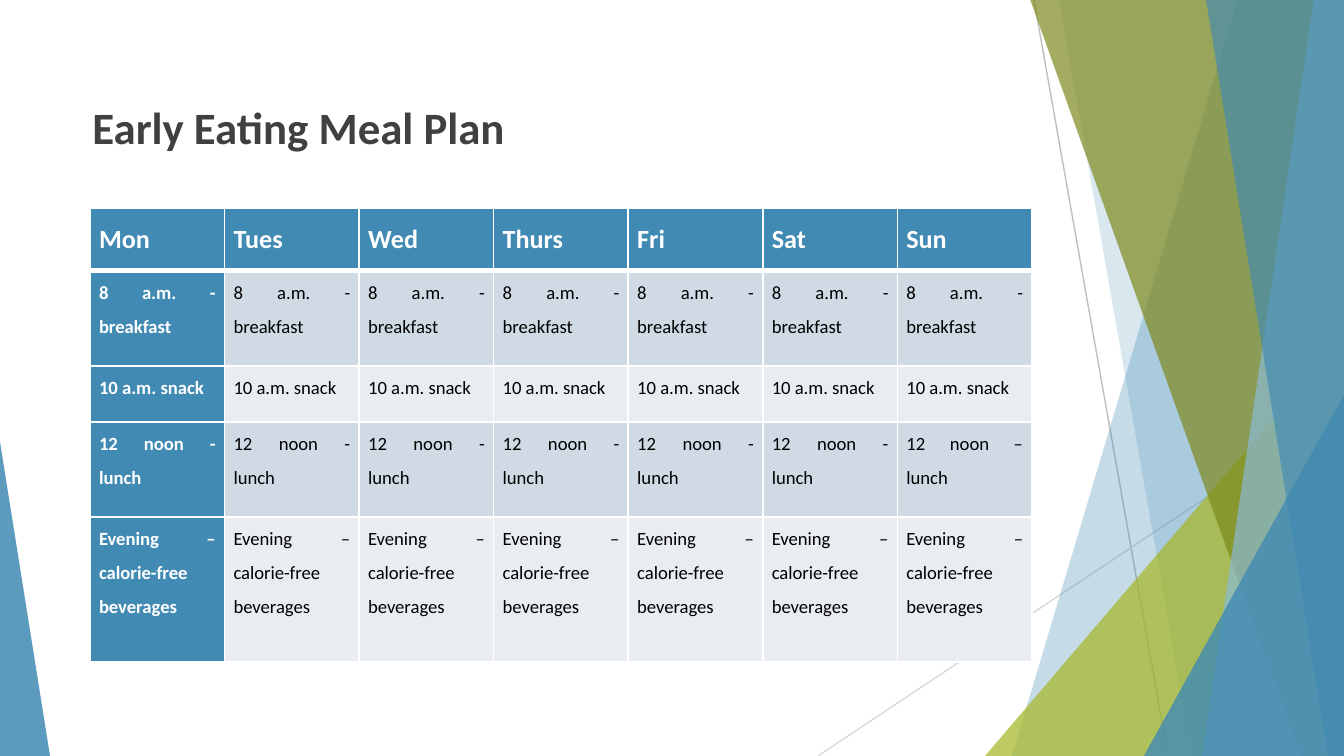
from lxml.etree import SubElement
from pptx import Presentation
from pptx.dml.color import RGBColor
from pptx.enum.shapes import MSO_CONNECTOR, MSO_SHAPE
from pptx.enum.text import MSO_ANCHOR, MSO_AUTO_SIZE, PP_ALIGN
from pptx.oxml.ns import qn
from pptx.util import Emu, Pt

# Content
TITLE = "Early Eating Meal Plan"
DAYS = ["Mon", "Tues", "Wed", "Thurs", "Fri", "Sat", "Sun"]
MEALS = [
    ["8 a.m. - breakfast"] * 7,
    ["10 a.m. snack"] * 7,
    ["12 noon - lunch"] * 6 + ["12 noon – lunch"],
    ["Evening – calorie-free beverages"] * 7,
]

# Colours and font
FONT = "Calibri"
WHITE = RGBColor(0xFF, 0xFF, 0xFF)
BLACK = RGBColor(0x00, 0x00, 0x00)
TITLE_GREY = RGBColor(0x40, 0x40, 0x40)
MID_GREY = RGBColor(0xBF, 0xBF, 0xBF)
LIGHT_GREY = RGBColor(0xD9, 0xD9, 0xD9)
BLUE = RGBColor(0x41, 0x8A, 0xB3)
PALE_BLUE = RGBColor(0x8A, 0xBA, 0xD4)
GREEN = RGBColor(0xA6, 0xB7, 0x27)
OLIVE = RGBColor(0x7D, 0x89, 0x1D)
BANDS = [RGBColor(0xCF, 0xDA, 0xE5), RGBColor(0xE9, 0xED, 0xF2)]

# Layout in px
WIDTH, HEIGHT = 1344, 756
EMU_PER_PX = 914400 / 134.4
TITLE_BOX = (79, 93, 614, 95)
TABLE_LEFT, TABLE_TOP, TABLE_WIDTH = 90, 208, 942
ROW_HEIGHTS = [63, 95, 56, 95, 145]
CELL_INSET = 9

# Decoration: lines as (start, end, colour)
LINES = [
    ((1034, 0), (1168, 756), MID_GREY),
    ((1344, 406), (818, 756), LIGHT_GREY),
]
# Bands run to the right edge: (top x, bottom x); triangles: (box, apex)
FACETS = [
    ("band", (1238, 1012), BLUE, 30),
    ("band", (1059, 1192), BLUE, 20),
    ("triangle", ((985, 336, 359, 420), 1), GREEN, 72),
    ("band", (1030, 1301), OLIVE, 70),
    ("band", (1314, 1202), PALE_BLUE, 70),
    ("band", (1206, 1328), BLUE, 65),
    ("triangle", ((1144, 395, 200, 361), 1), BLUE, 80),
    ("triangle", ((0, 442, 50, 314), 0), BLUE, 85),
]


def px(value):
    return Emu(round(value * EMU_PER_PX))


def add_run(paragraph, text, size, color, bold):
    run = paragraph.add_run()
    run.text = text
    font = run.font
    font.name, font.size, font.bold = FONT, Pt(size), bold
    font.color.rgb = color


def add_line(shapes, start, end, color):
    line = shapes.add_connector(MSO_CONNECTOR.STRAIGHT, *map(px, start + end))
    line.line.color.rgb = color
    line.line.width = Pt(0.75)
    SubElement(line._element.spPr, qn("a:effectLst"))


def add_facet(shapes, kind, geometry, color, opacity):
    if kind == "band":
        top_x, bottom_x = geometry
        builder = shapes.build_freeform(top_x, -1, scale=EMU_PER_PX)
        builder.add_line_segments(
            [(WIDTH, -1), (WIDTH, HEIGHT), (bottom_x, HEIGHT)], close=True)
        shape = builder.convert_to_shape()
    else:
        box, apex = geometry
        shape = shapes.add_shape(MSO_SHAPE.ISOSCELES_TRIANGLE, *map(px, box))
        shape.adjustments[0] = apex
    shape.shadow.inherit = False
    shape.line.fill.background()
    shape.fill.solid()
    shape.fill.fore_color.rgb = color
    color_node = shape._element.spPr.find(qn("a:solidFill"))[0]
    SubElement(color_node, qn("a:alpha"), val=str(opacity * 1000))


def set_borders(cell, top, bottom):
    properties = cell._tc.get_or_add_tcPr()
    for side, width in (("L", 1), ("R", 1), ("T", top), ("B", bottom)):
        border = SubElement(properties, qn("a:ln" + side), w=str(Pt(width)))
        fill = SubElement(border, qn("a:solidFill"))
        SubElement(fill, qn("a:srgbClr"), val=str(WHITE))


def fill_cell(cell, text, row, column):
    heading = row == 0 or column == 0
    set_borders(cell, 3 if row == 1 else 1, 3 if row == 0 else 1)
    cell.fill.solid()
    cell.fill.fore_color.rgb = BLUE if heading else BANDS[(row - 1) % 2]
    cell.margin_left = cell.margin_right = px(CELL_INSET)
    cell.margin_top = cell.margin_bottom = 0
    cell.vertical_anchor = MSO_ANCHOR.TOP
    paragraph = cell.text_frame.paragraphs[0]
    paragraph.alignment = PP_ALIGN.JUSTIFY
    paragraph.line_spacing = 1.5
    add_run(paragraph, text, 14 if row == 0 else 10,
            WHITE if heading else BLACK, heading)


def main():
    presentation = Presentation()
    presentation.slide_width, presentation.slide_height = px(WIDTH), px(HEIGHT)
    slide = presentation.slides.add_slide(presentation.slide_layouts[5])
    shapes = slide.shapes

    # Title
    title = shapes.title
    title.left, title.top, title.width, title.height = map(px, TITLE_BOX)
    frame = title.text_frame
    frame.word_wrap = True
    frame.auto_size = MSO_AUTO_SIZE.NONE
    frame.vertical_anchor = MSO_ANCHOR.TOP
    paragraph = frame.paragraphs[0]
    paragraph.alignment = PP_ALIGN.LEFT
    paragraph.space_before = Pt(7.5)
    add_run(paragraph, TITLE, 24, TITLE_GREY, True)

    # Decoration
    for line in LINES:
        add_line(shapes, *line)
    for facet in FACETS:
        add_facet(shapes, *facet)

    # Meal table
    rows = [DAYS] + MEALS
    table = shapes.add_table(
        len(rows), len(DAYS), px(TABLE_LEFT), px(TABLE_TOP),
        px(TABLE_WIDTH), px(sum(ROW_HEIGHTS))).table
    for column in table.columns:
        column.width = px(TABLE_WIDTH / len(DAYS))
    for row, texts in enumerate(rows):
        table.rows[row].height = px(ROW_HEIGHTS[row])
        for column, text in enumerate(texts):
            fill_cell(table.cell(row, column), text, row, column)

    presentation.save("out.pptx")


if __name__ == "__main__":
    main()
